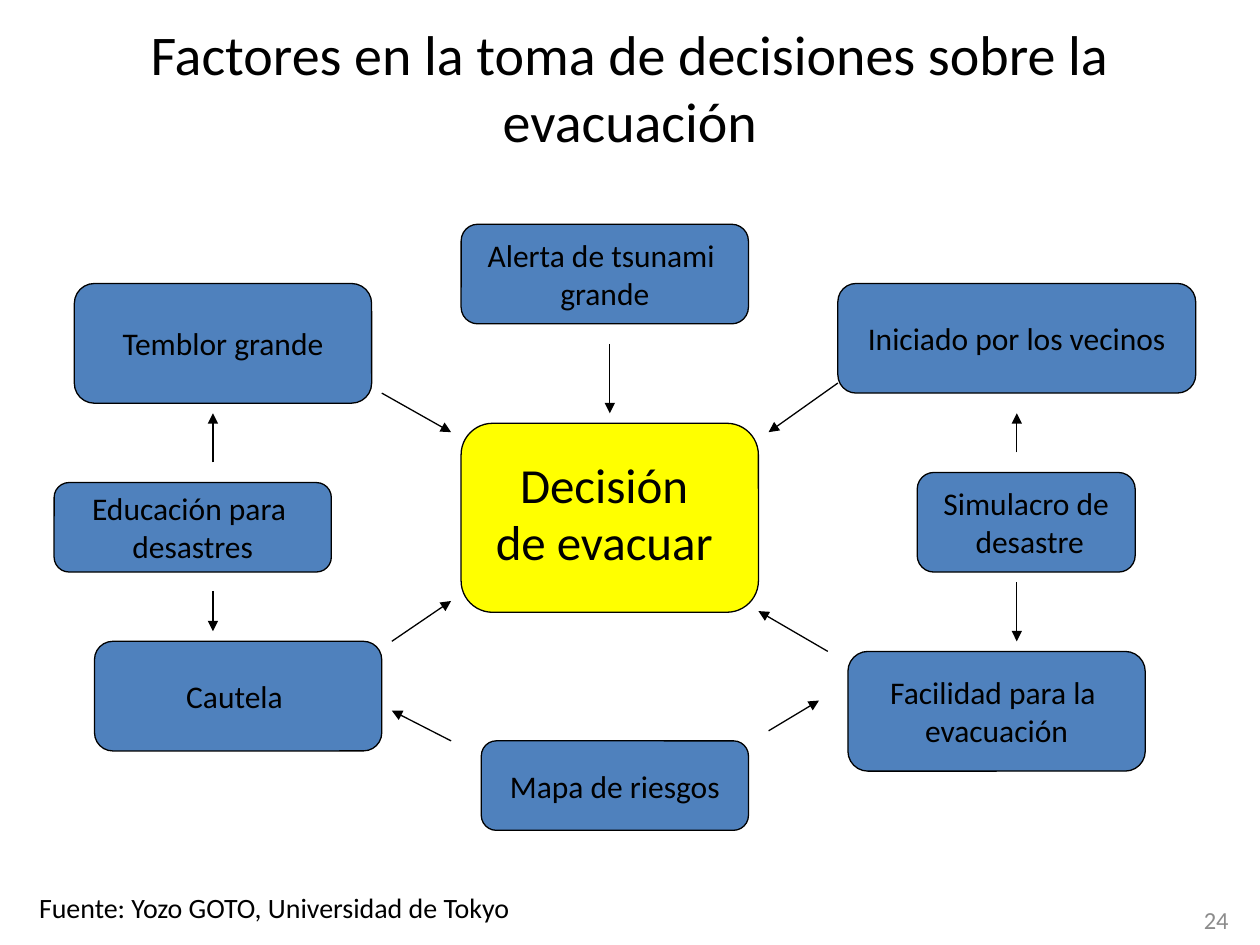
from typing import NamedTuple

import pptx
import pptx.dml.color
import pptx.enum.shapes
import pptx.enum.text
import pptx.oxml.ns
import pptx.util
from lxml import etree
from pptx.util import Inches

FONT = "Calibri"
BLACK, WHITE, GREY = "000000", "FFFFFF", "8C8C8C"
BLUE, YELLOW = "4F81BD", "FFFF00"
LINE_WIDTH = pptx.util.Pt(0.75)
ALIGN = pptx.enum.text.PP_ALIGN
ANCHOR = pptx.enum.text.MSO_ANCHOR
SHAPE = pptx.enum.shapes.MSO_SHAPE


class Factor(NamedTuple):
    lines: list[str]
    left: float
    top: float
    width: float
    height: float


class Arrow(NamedTuple):
    x1: float
    y1: float
    x2: float
    y2: float


DECISION = Factor(["Decisión ", "de evacuar "], 3.66, 3.36, 2.36, 1.5)

FACTORS = [
    Factor(["Temblor grande"], 0.59, 2.25, 2.36, 0.95),
    Factor(["Alerta de tsunami ", "grande"], 3.66, 1.78, 2.28, 0.79),
    Factor(["Iniciado por los vecinos"], 6.65, 2.25, 2.84, 0.87),
    Factor(["Cautela "], 0.75, 5.09, 2.28, 0.87),
    Factor(["Educación para ", "desastres"], 0.43, 3.83, 2.2, 0.71),
    Factor(["Simulacro de", " desastre"], 7.28, 3.75, 1.73, 0.79),
    Factor(["Facilidad para la ", "evacuación"], 6.73, 5.17, 2.36, 0.95),
    Factor(["Mapa de riesgos"], 3.82, 5.88, 2.12, 0.71),
]

ARROWS = [
    # Towards the decision
    Arrow(3.03, 3.12, 3.58, 3.43),
    Arrow(3.11, 5.09, 3.58, 4.77),
    Arrow(6.57, 5.17, 6.02, 4.85),
    Arrow(6.65, 3.04, 6.1, 3.43),
    Arrow(4.84, 2.73, 4.84, 3.28),
    # Between factors
    Arrow(1.69, 3.67, 1.69, 3.28),
    Arrow(1.69, 4.69, 1.69, 5.01),
    Arrow(8.07, 4.62, 8.07, 5.09),
    Arrow(8.07, 3.59, 8.07, 3.28),
    Arrow(3.58, 5.88, 3.11, 5.64),
    Arrow(6.1, 5.8, 6.5, 5.56),
]


def rgb(color: str) -> pptx.dml.color.RGBColor:
    return pptx.dml.color.RGBColor.from_string(color)


def write(sp, lines: list[str], *, size: float, color: str = BLACK, align=ALIGN.CENTER,
          anchor=ANCHOR.MIDDLE, wrap: bool = True, spacing: float = 1.0,
          before: float = 0, inset: float | None = None) -> None:
    """Fill a shape with one paragraph per line; before is in points."""
    tf = sp.text_frame
    tf.word_wrap = wrap
    tf.vertical_anchor = anchor
    if inset is not None:
        tf.margin_left = tf.margin_right = tf.margin_top = tf.margin_bottom = Inches(inset)
    for i, line in enumerate(lines):
        p = tf.add_paragraph() if i else tf.paragraphs[0]
        p.alignment = align
        p.line_spacing = spacing
        p.space_before = pptx.util.Pt(before if i else 0)
        r = p.add_run()
        r.text = line
        r.font.name = FONT
        r.font.size = pptx.util.Pt(size)
        r.font.color.rgb = rgb(color)


def add_text(s, left: float, top: float, width: float, height: float, text: str, **fmt) -> None:
    sp = s.shapes.add_textbox(Inches(left), Inches(top), Inches(width), Inches(height))
    write(sp, [text], **fmt)


def add_box(s, box: Factor, fill: str, line: str = BLACK, kind=SHAPE.ROUNDED_RECTANGLE, **fmt) -> None:
    sp = s.shapes.add_shape(kind, Inches(box.left), Inches(box.top),
                            Inches(box.width), Inches(box.height))
    sp.shadow.inherit = False
    sp.fill.solid()
    sp.fill.fore_color.rgb = rgb(fill)
    sp.line.color.rgb = rgb(line)
    sp.line.width = LINE_WIDTH
    write(sp, box.lines, **fmt)


def add_arrow(s, arrow: Arrow) -> None:
    cx = s.shapes.add_connector(pptx.enum.shapes.MSO_CONNECTOR.STRAIGHT,
                                *(Inches(v) for v in arrow))
    cx.line.color.rgb = rgb(BLACK)
    cx.line.width = LINE_WIDTH
    qn = pptx.oxml.ns.qn
    etree.SubElement(cx.line._get_or_add_ln(), qn("a:tailEnd"), type="triangle")
    etree.SubElement(cx._element.spPr, qn("a:effectLst"))


def main() -> None:
    prs = pptx.Presentation()
    prs.slide_width, prs.slide_height = Inches(10), Inches(7.5)
    s = prs.slides.add_slide(prs.slide_layouts[6])

    add_text(s, 0.5, 0.3, 9, 0.77,
             "Factores en la toma de decisiones sobre la evacuación", size=32)
    add_box(s, DECISION, YELLOW, size=28, wrap=False, spacing=0.8, before=5.6)
    for factor in FACTORS:
        add_box(s, factor, BLUE, size=18, wrap=False)
    for arrow in ARROWS:
        add_arrow(s, arrow)

    add_text(s, 9.02, 7.1, 0.83, 0.4, "24", size=14, color=GREY, align=ALIGN.RIGHT)
    source = Factor(["Fuente: Yozo GOTO, Universidad de Tokyo"], 0.27, 7.06, 4.1, 0.24)
    add_box(s, source, WHITE, WHITE, SHAPE.RECTANGLE, size=16, align=ALIGN.LEFT,
            anchor=ANCHOR.TOP, spacing=0.9, inset=0.04)
    prs.save("out.pptx")


if __name__ == "__main__":
    main()
